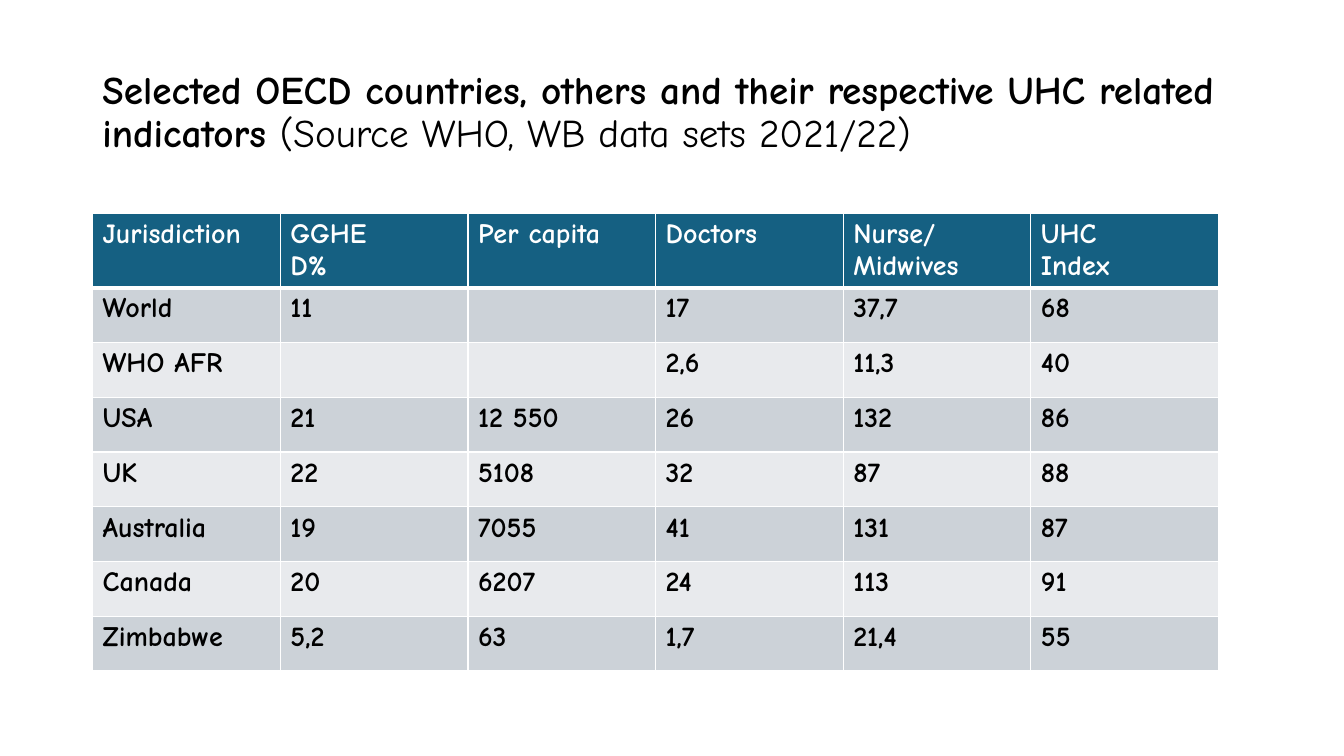
from dataclasses import dataclass

from lxml import etree
from pptx import Presentation
from pptx.dml.color import RGBColor
from pptx.enum.text import MSO_ANCHOR, MSO_AUTO_SIZE, PP_ALIGN
from pptx.oxml.ns import qn
from pptx.util import Pt

MIDDLE = MSO_ANCHOR.MIDDLE
NO_FIT = MSO_AUTO_SIZE.NONE
LEFT = PP_ALIGN.LEFT
TITLE_ONLY = 5
FONT = "Comic Neue"
COLORS = {
    "ink": "000000",
    "white": "FFFFFF",
    "head": "156082",
    "odd": "CCD2D8",
    "even": "E8EAED",
}


@dataclass
class Row:
    cells: list[str]
    fill: str
    ink: str = "ink"
    high: float = 39.14
    base: float = 1  # width of the bottom border


HEAD = Row(
    ["Jurisdiction", "GGHE\nD%", "Per capita", "Doctors", "Nurse/\nMidwives", "UHC\nIndex"],
    "head", "white", 52.2, 3,
)
DATA = [
    ["World", "11", "", "17", "37,7", "68"],
    ["WHO AFR", "", "", "2,6", "11,3", "40"],
    ["USA", "21", "12 550", "26", "132", "86"],
    ["UK", "22", "5108", "32", "87", "88"],
    ["Australia", "19", "7055", "41", "131", "87"],
    ["Canada", "20", "6207", "24", "113", "91"],
    ["Zimbabwe", "5,2", "63", "1,7", "21,4", "55"],
]
ROWS = [HEAD] + [Row(d, "even" if i % 2 else "odd") for i, d in enumerate(DATA)]


def add_run(para, text: str, size: float, ink: str, bold: bool = True) -> None:
    run = para.add_run()
    run.text = text
    font = run.font
    font.name, font.size, font.bold = FONT, Pt(size), bold
    font.color.rgb = RGBColor.from_string(COLORS[ink])


def add_edges(cell, base: float) -> None:
    props = cell._tc.get_or_add_tcPr()
    for side, width in (("L", 1), ("R", 1), ("T", 1), ("B", base)):
        line = etree.SubElement(props, qn(f"a:ln{side}"), w=str(Pt(width)))
        fill = etree.SubElement(line, qn("a:solidFill"))
        etree.SubElement(fill, qn("a:srgbClr"), val=COLORS["white"])


def fill_cell(cell, text: str, row: Row) -> None:
    add_edges(cell, row.base)
    cell.fill.solid()
    cell.fill.fore_color.rgb = RGBColor.from_string(COLORS[row.fill])
    frame = cell.text_frame
    for i, part in enumerate(text.split("\n") if text else []):
        para = frame.add_paragraph() if i else frame.paragraphs[0]
        add_run(para, part, 20, row.ink)


def add_title(slide) -> None:
    title = slide.shapes.title
    title.left, title.top, title.width, title.height = Pt(66), Pt(28.8), Pt(828), Pt(104.4)
    frame = title.text_frame
    frame.word_wrap = True
    frame.auto_size = NO_FIT
    frame.vertical_anchor = MIDDLE
    para = frame.paragraphs[0]
    para.alignment = LEFT
    para.line_spacing = 0.9
    add_run(para, "Selected OECD countries, others and their respective UHC related indicators ", 28, "ink")
    add_run(para, "(Source WHO, WB data sets 2021/22)", 28, "ink", False)


def add_grid(slide) -> None:
    cols = len(HEAD.cells)
    high = sum(row.high for row in ROWS)
    grid = slide.shapes.add_table(len(ROWS), cols, Pt(66.2), Pt(152.2), Pt(804.3), Pt(high)).table
    for r, row in enumerate(ROWS):
        grid.rows[r].height = Pt(row.high)
        for c, text in enumerate(row.cells):
            fill_cell(grid.cell(r, c), text, row)


def main() -> None:
    deck = Presentation()
    deck.slide_width, deck.slide_height = Pt(960), Pt(540)
    slide = deck.slides.add_slide(deck.slide_layouts[TITLE_ONLY])
    # Heading with its source note
    add_title(slide)
    # Table of indicators
    add_grid(slide)
    deck.save("out.pptx")


if __name__ == "__main__":
    main()
